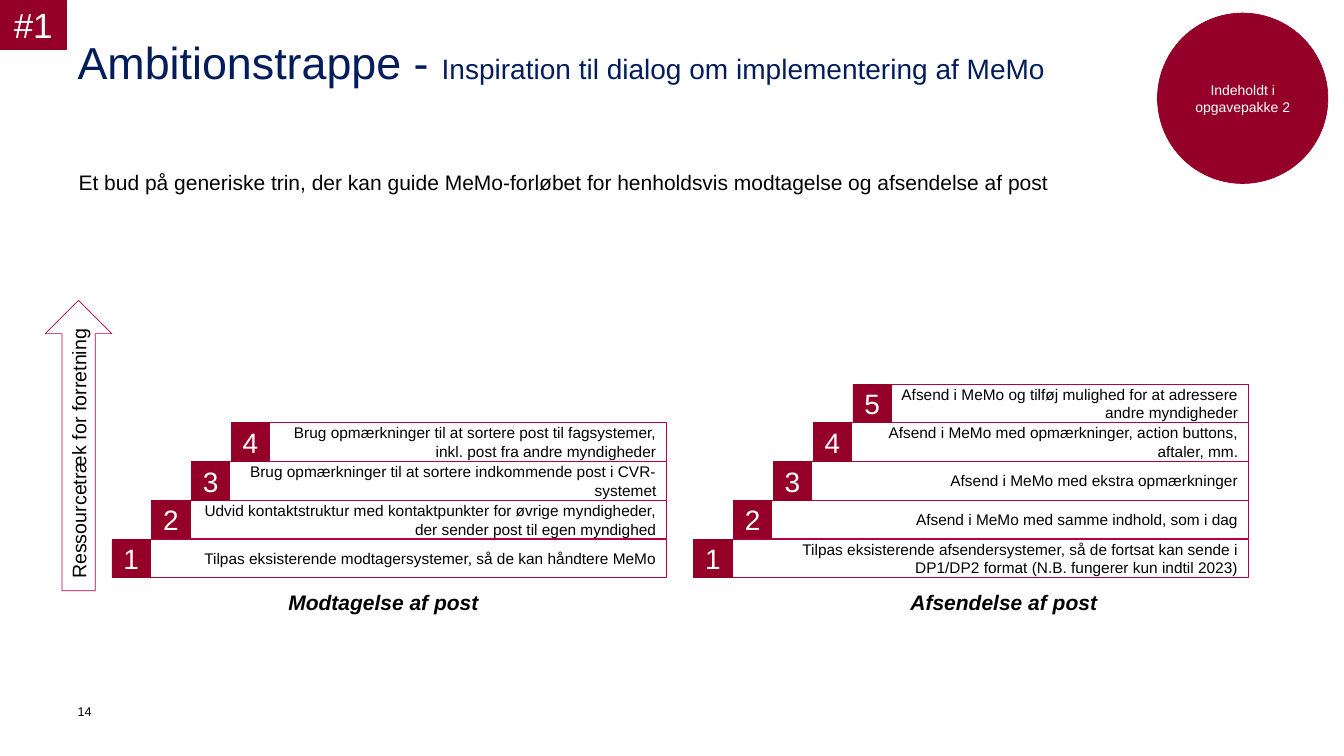
from dataclasses import dataclass

from pptx import Presentation
from pptx.dml.color import RGBColor
from pptx.enum import shapes, text
from pptx.shapes.autoshape import Shape
from pptx.slide import Slide
from pptx.util import Inches, Pt


@dataclass(frozen=True)
class Theme:
    font: str = "Arial"
    navy: str = "031D5C"
    wine: str = "940027"
    outline: str = "B40047"
    black: str = "000000"
    white: str = "FFFFFF"
    line_width: float = 0.5
    title: float = 32
    tag: float = 25
    subtitle: float = 20
    step_number: float = 20
    lead: float = 15
    arrow: float = 14
    step: float = 11
    bubble: float = 10
    page_number: float = 9


@dataclass(frozen=True)
class Area:
    left: float
    top: float
    width: float
    height: float

    def lengths(self) -> tuple[int, ...]:
        return tuple(Inches(side) for side in (self.left, self.top, self.width, self.height))


@dataclass(frozen=True)
class Staircase:
    heading: str
    heading_left: float
    left: float
    right: float
    steps: tuple[str, ...]


THEME = Theme()
SHAPE = shapes.MSO_SHAPE
ALIGN = text.PP_ALIGN

BADGE = 0.38
STEP_RUN = 1.58 / 4
STEP_RISE = 1.54 / 4
FIRST_STEP_TOP = 5.35

STAIRCASES = (
    Staircase("Modtagelse af post", 2.86, 1.11, 6.61, (
        "Tilpas eksisterende modtagersystemer, så de kan håndtere MeMo",
        "Udvid kontaktstruktur med kontaktpunkter for øvrige myndigheder, der sender post til egen myndighed",
        "Brug opmærkninger til at sortere indkommende post i CVR-systemet",
        "Brug opmærkninger til at sortere post til fagsystemer, inkl. post fra andre myndigheder",
    )),
    Staircase("Afsendelse af post", 9.03, 6.88, 12.38, (
        "Tilpas eksisterende afsendersystemer, så de fortsat kan sende i DP1/DP2 format "
        "(N.B. fungerer kun indtil 2023)",
        "Afsend i MeMo med samme indhold, som i dag",
        "Afsend i MeMo med ekstra opmærkninger",
        "Afsend i MeMo med opmærkninger, action buttons, aftaler, mm.",
        "Afsend i MeMo og tilføj mulighed for at adressere andre myndigheder",
    )),
)


def style_font(font, size: float, color: str) -> None:
    font.name = THEME.font
    font.size = Pt(size)
    font.color.rgb = RGBColor.from_string(color)


def add_shape(page: Slide, kind: SHAPE, area: Area, words: str, size: float,
              align: ALIGN = ALIGN.CENTER, filled: bool = True) -> Shape:
    """Add a wine-filled shape with white text, or an outlined one with black text."""
    shape = page.shapes.add_shape(kind, *area.lengths())
    shape.shadow.inherit = False
    if filled:
        shape.fill.solid()
        shape.fill.fore_color.rgb = RGBColor.from_string(THEME.wine)
    else:
        shape.fill.background()
    shape.line.color.rgb = RGBColor.from_string(THEME.wine if filled else THEME.outline)
    shape.line.width = Pt(THEME.line_width)
    frame = shape.text_frame
    frame.word_wrap = True
    frame.vertical_anchor = text.MSO_ANCHOR.MIDDLE
    frame.text = words
    para = frame.paragraphs[0]
    para.alignment = align
    style_font(para.runs[0].font, size, THEME.white if filled else THEME.black)
    return shape


def add_label(page: Slide, area: Area, words: str, size: float, emphasis: bool = False) -> None:
    frame = page.shapes.add_textbox(*area.lengths()).text_frame
    frame.word_wrap = True
    frame.margin_left = frame.margin_top = frame.margin_right = frame.margin_bottom = 0
    frame.text = words
    span = frame.paragraphs[0].runs[0]
    style_font(span.font, size, THEME.black)
    span.font.bold = span.font.italic = emphasis


def set_title(page: Slide) -> None:
    title = page.shapes.title
    title.left, title.top, title.width, title.height = Area(0.77, 0.4, 11.8, 1.02).lengths()
    frame = title.text_frame
    frame.auto_size = text.MSO_AUTO_SIZE.NONE
    frame.word_wrap = True
    frame.vertical_anchor = text.MSO_ANCHOR.TOP
    frame.margin_left = frame.margin_top = frame.margin_bottom = 0
    frame.margin_right = Inches(1.13)
    para = frame.paragraphs[0]
    para.alignment = ALIGN.LEFT
    para.line_spacing = 0.9
    for words, size in (("Ambitionstrappe - ", THEME.title),
                        ("Inspiration til dialog om implementering af MeMo", THEME.subtitle)):
        span = para.add_run()
        span.text = words
        style_font(span.font, size, THEME.navy)


def add_staircase(page: Slide, stairs: Staircase) -> None:
    for index, words in enumerate(stairs.steps):
        left = stairs.left + index * STEP_RUN
        top = FIRST_STEP_TOP - index * STEP_RISE
        bar_left = left + BADGE
        add_shape(page, SHAPE.RECTANGLE, Area(bar_left, top, stairs.right - bar_left, BADGE),
                  words, THEME.step, ALIGN.RIGHT, filled=False)
        add_shape(page, SHAPE.RECTANGLE, Area(left, top, BADGE, BADGE),
                  str(index + 1), THEME.step_number)
    add_label(page, Area(stairs.heading_left, 5.85, 2.37, 0.25), stairs.heading,
              THEME.lead, emphasis=True)


def main() -> None:
    deck = Presentation()
    deck.slide_width, deck.slide_height = Inches(13.33), Inches(7.5)
    page = deck.slides.add_slide(deck.slide_layouts.get_by_name("Title Only"))

    set_title(page)
    add_label(page, Area(0.78, 1.68, 11.8, 0.25),
              "Et bud på generiske trin, der kan guide MeMo-forløbet for henholdsvis "
              "modtagelse og afsendelse af post", THEME.lead)
    arrow = add_shape(page, SHAPE.UP_ARROW, Area(0.45, 2.98, 0.66, 2.88),
                      "Ressourcetræk for forretning", THEME.arrow, filled=False)
    arrow.text_frame._txBody.bodyPr.set("vert", "vert270")
    for stairs in STAIRCASES:
        add_staircase(page, stairs)
    add_shape(page, SHAPE.OVAL, Area(11.48, 0.13, 1.69, 1.69),
              "Indeholdt i opgavepakke 2", THEME.bubble)
    add_shape(page, SHAPE.RECTANGLE, Area(0, 0, 0.66, 0.49), "#1", THEME.tag)
    add_label(page, Area(0.77, 6.98, 0.31, 0.39), "14", THEME.page_number)

    deck.save("out.pptx")


if __name__ == "__main__":
    main()
